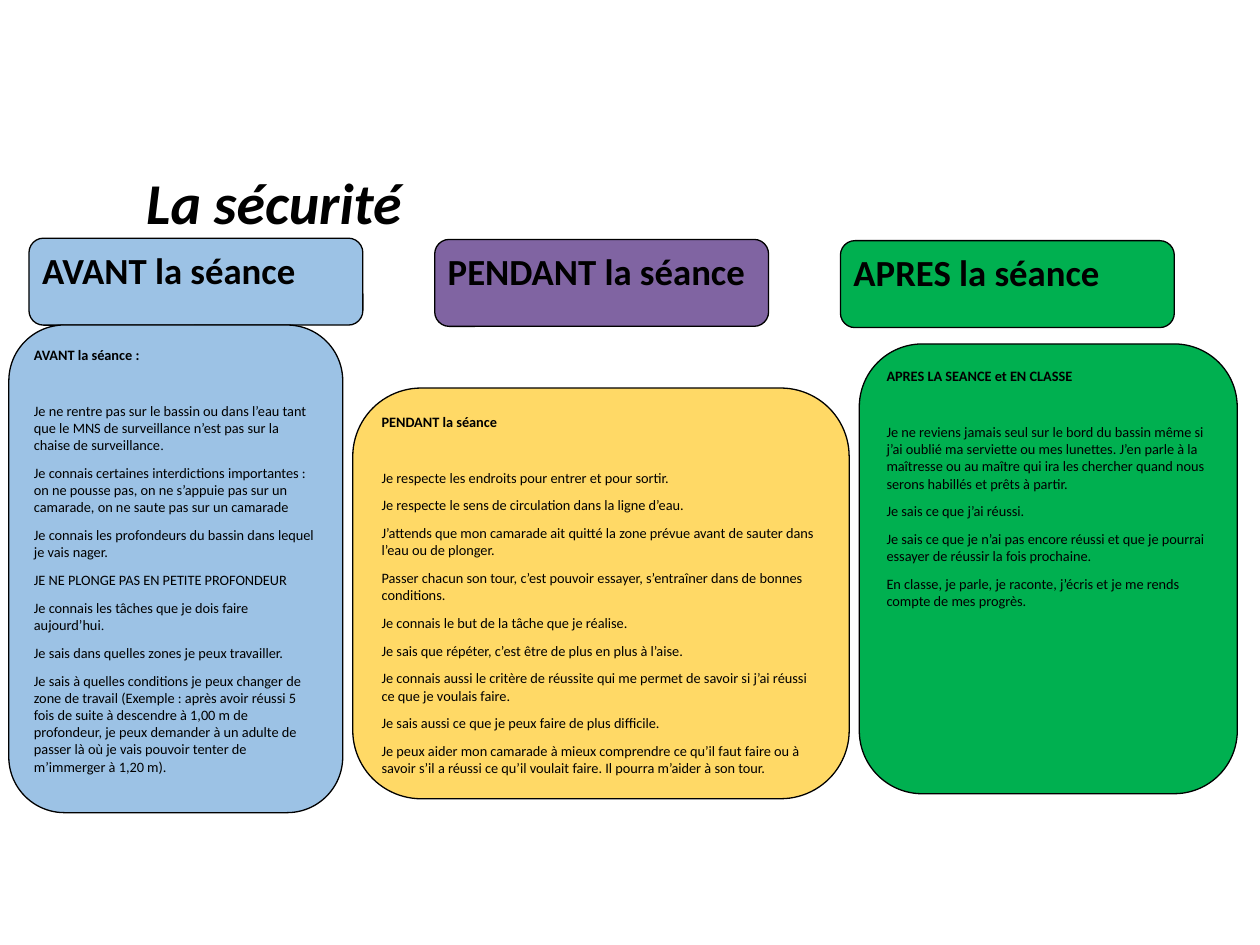
"""Builds a slide of swimming-pool safety rules before, during and after the session."""
from pptx import Presentation
from pptx.dml.color import RGBColor
from pptx.enum.shapes import MSO_SHAPE
from pptx.enum.text import MSO_ANCHOR, PP_ALIGN
from pptx.util import Inches, Pt

ROUNDED = MSO_SHAPE.ROUNDED_RECTANGLE
TOP = MSO_ANCHOR.TOP
LEFT = PP_ALIGN.LEFT
SANS, SERIF = "Calibri", "Times New Roman"
BLACK, BLUE, PURPLE, GREEN, YELLOW = "000000", "9CC2E5", "8064A2", "00B050", "FFD966"
TITLE_SIZE, HEADER_SIZE, BODY_SIZE = 33, 21, 8.2
RULE_GAP, HEADING_GAP = 6, 22


def rgb(value):
    return RGBColor.from_string(value)


def write(paragraph, text, size=BODY_SIZE, font=SANS, bold=False, italic=False, after=RULE_GAP):
    paragraph.alignment = LEFT
    paragraph.space_after = Pt(after)
    run = paragraph.add_run()
    run.text = text
    run.font.size = Pt(size)
    run.font.name = font
    run.font.bold = bold
    run.font.italic = italic
    run.font.color.rgb = rgb(BLACK)


headers = [
    ("AVANT la séance", BLUE),
    ("PENDANT la séance", PURPLE),
    ("APRES la séance", GREEN),
]
before_rules = [
    ("Je ne rentre pas sur le bassin ou dans l’eau tant que le MNS de surveillance "
     "n’est pas sur la chaise de surveillance", "."),
    ("Je connais certaines interdictions importantes : on ne pousse pas, on ne s’appuie "
     "pas sur un camarade, on ne saute pas sur un camarade",),
    ("Je connais les profondeurs du bassin dans lequel je vais nager.",),
    ("JE NE PLONGE PAS EN PETITE PROFONDEUR",),
    ("Je connais les tâches que je dois faire aujourd’hui", "."),
    ("Je sais dans quelles zones je peux travailler.",),
    ("Je sais à quelles conditions je peux changer de zone de travail (Exemple : après "
     "avoir réussi 5 fois de suite à descendre à 1,00 m de profondeur, je peux demander "
     "à un adulte de passer là où je vais pouvoir tenter de m’immerger à 1,20 m).",),
]
during_rules = [
    ("Je respecte les endroits pour entrer et pour sortir.",),
    ("Je respecte le sens de circulation dans la ligne d’eau.",),
    ("J’attends que mon camarade ait quitté la zone prévue avant de sauter dans l’eau "
     "ou de plonger.",),
    ("Passer chacun son tour, c’est pouvoir essayer, s’entraîner dans de bonnes conditions.",),
    ("Je connais le but de la tâche que je réalise.",),
    ("Je sais que répéter, c’est être de plus en plus à l’aise.",),
    ("Je connais aussi le critère de réussite qui me permet de savoir si j’ai réussi "
     "ce que je voulais faire.",),
    ("Je sais aussi ce que je peux faire de plus difficile.",),
    ("Je peux aider mon camarade à mieux comprendre ce qu’il faut faire ou à savoir "
     "s’il a réussi ce qu’il voulait faire. Il pourra m’aider à son tour.",),
]
after_rules = [
    ("Je ne reviens jamais seul sur le bord du bassin même si j’ai oublié ma serviette "
     "ou mes lunettes. J’en parle à la maîtresse ou au maître qui ira les chercher quand "
     "nous serons habillés et prêts à partir.",),
    ("Je sais ce que j’ai réussi.",),
    ("Je sais ce que je n’ai pas encore réussi et que je pourrai essayer de réussir "
     "la fois prochaine.",),
    ("En classe, je parle, je raconte, j’écris et je me rends compte de mes progrès.",),
]

cards = [
    ((0.23 + 3.22 * column, 1.89 + 0.01 * column, 2.65, 0.69), color, heading, HEADER_SIZE, [])
    for column, (heading, color) in enumerate(headers)
]
cards += [
    ((0.07, 2.58, 2.65, 3.87), BLUE, "AVANT la séance :", BODY_SIZE, before_rules),
    ((2.8, 3.08, 3.94, 3.26), YELLOW, "PENDANT la séance", BODY_SIZE, during_rules),
    ((6.82, 2.73, 3, 3.57), GREEN, "APRES LA SEANCE et EN CLASSE", BODY_SIZE, after_rules),
]

presentation = Presentation()
presentation.slide_width = Inches(10)
presentation.slide_height = Inches(7.5)
slide = presentation.slides.add_slide(presentation.slide_layouts[5])

title = slide.shapes.title
title.left, title.top, title.width, title.height = map(Inches, (1.06, 1.27, 2.63, 0.66))
title.text_frame.vertical_anchor = TOP
write(title.text_frame.paragraphs[0], "La sécurité", size=TITLE_SIZE, bold=True, italic=True, after=0)

for bounds, color, heading, heading_size, rules in cards:
    card = slide.shapes.add_shape(ROUNDED, *map(Inches, bounds))
    card.shadow.inherit = False
    card.fill.solid()
    card.fill.fore_color.rgb = rgb(color)
    card.line.color.rgb = rgb(BLACK)
    card.line.width = Pt(0.75)
    frame = card.text_frame
    frame.word_wrap = True
    frame.vertical_anchor = TOP
    frame.margin_left = frame.margin_right = Inches(0.07)
    frame.margin_top = frame.margin_bottom = Inches(0.04)
    write(frame.paragraphs[0], heading, size=heading_size, bold=True, after=HEADING_GAP)
    for rule in rules:
        paragraph = frame.add_paragraph()
        for piece, font in zip(rule, (SANS, SERIF)):
            write(paragraph, piece, font=font)

presentation.save("out.pptx")
